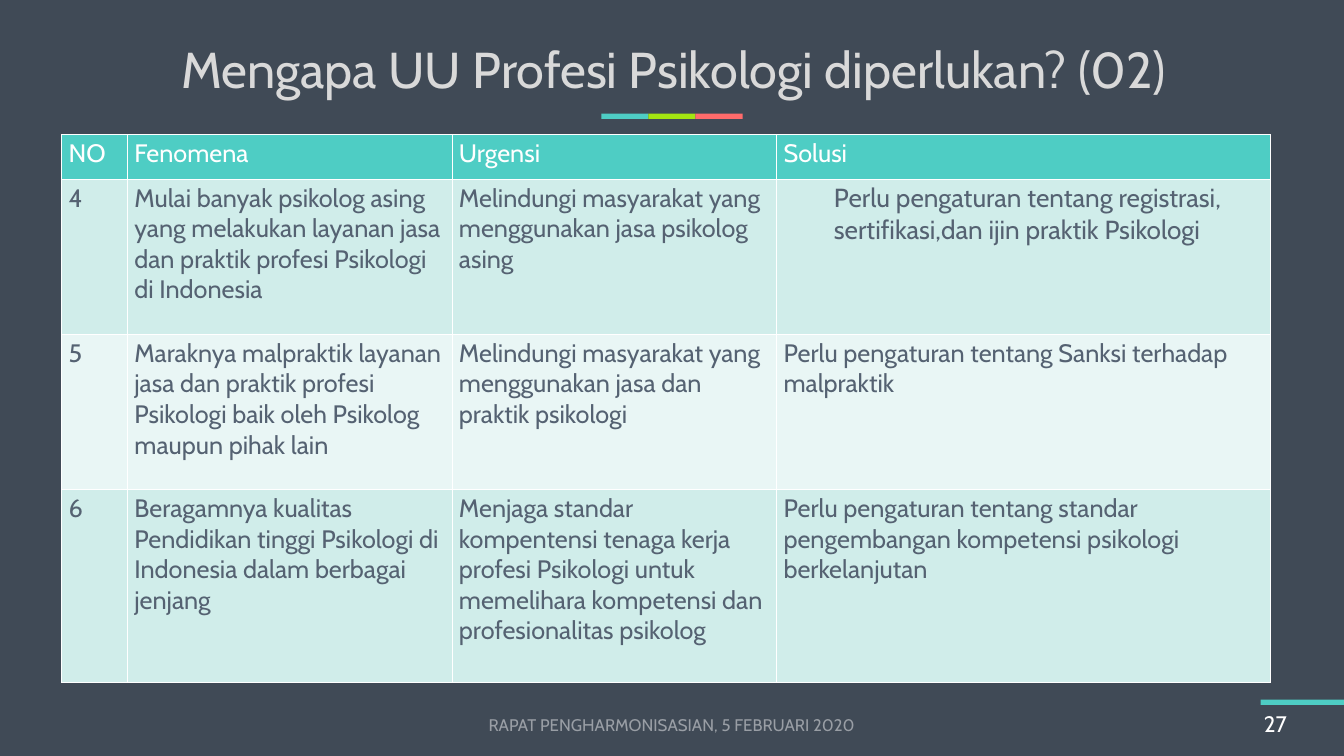
from lxml import etree
from pptx import Presentation
from pptx.dml.color import RGBColor
from pptx.enum.shapes import MSO_SHAPE
from pptx.enum.text import MSO_ANCHOR, MSO_AUTO_SIZE, PP_ALIGN
from pptx.oxml.ns import qn
from pptx.util import Inches, Pt

RECT = MSO_SHAPE.RECTANGLE
MIDDLE = MSO_ANCHOR.MIDDLE
NO_FIT = MSO_AUTO_SIZE.NONE
LEFT, CENTER = PP_ALIGN.LEFT, PP_ALIGN.CENTER

WIDE, HIGH = 20, 11.25  # grid of one-inch columns and rows
TITLE_ONLY = 5
TEAL, LIME, CORAL = "4ECDC4", "A3E511", "FF6B6B"
WHITE, SLATE = "FFFFFF", "556272"
BANDS = ["D0EDEA", "E9F6F5"]

HEADS = ["NO", "Fenomena", "Urgensi", "Solusi"]
ROWS = [
    ["4",
     "Mulai banyak psikolog asing yang melakukan layanan jasa dan praktik profesi Psikologi di Indonesia",
     "Melindungi masyarakat yang menggunakan jasa psikolog asing",
     "Perlu pengaturan tentang registrasi, sertifikasi,dan ijin praktik Psikologi"],
    ["5",
     "Maraknya malpraktik layanan jasa dan praktik profesi Psikologi baik oleh Psikolog maupun pihak lain",
     "Melindungi masyarakat yang menggunakan jasa dan praktik psikologi",
     "Perlu pengaturan tentang Sanksi terhadap malpraktik"],
    ["6",
     "Beragamnya kualitas Pendidikan tinggi Psikologi di Indonesia dalam berbagai jenjang",
     "Menjaga standar kompentensi tenaga kerja profesi Psikologi untuk memelihara kompetensi dan profesionalitas psikolog",
     "Perlu pengaturan tentang standar pengembangan kompetensi psikologi berkelanjutan"],
]


def paint(color, code):
    color.rgb = RGBColor.from_string(code)


def fill(item, code):
    item.fill.solid()
    paint(item.fill.fore_color, code)


def edge(cell, code, width):
    """Draw a line on all four sides of a table cell."""
    props = cell._tc.get_or_add_tcPr()
    for side in ("a:lnL", "a:lnR", "a:lnT", "a:lnB"):
        line = etree.SubElement(props, qn(side), w=str(Pt(width)))
        solid = etree.SubElement(line, qn("a:solidFill"))
        etree.SubElement(solid, qn("a:srgbClr"), val=code)


class Deck:
    """Holds the style and the current slide; lengths are grid units."""

    font = "Cabin"

    def __init__(self, back):
        self.file = Presentation()
        self.file.slide_width = Inches(WIDE)
        self.file.slide_height = Inches(HIGH)
        layout = self.file.slide_layouts[TITLE_ONLY]
        self.slide = self.file.slides.add_slide(layout)
        fill(self.slide.background, back)

    def put(self, frame, text, size, code, align=LEFT):
        """Set a frame's text in the deck's style and return its paragraph."""
        frame.text = text
        frame.word_wrap = True
        para = frame.paragraphs[0]
        para.alignment = align
        font = para.runs[0].font
        font.name, font.size = self.font, Pt(size)
        paint(font.color, code)
        return para

    def title(self, box, text, size, code):
        shape = self.slide.shapes.title
        shape.left, shape.top, shape.width, shape.height = map(Inches, box)
        frame = shape.text_frame
        para = self.put(frame, text, size, code, CENTER)
        para.line_spacing = 0.9
        frame.auto_size = NO_FIT
        frame.vertical_anchor = MIDDLE

    def label(self, box, text, size, code, align=LEFT):
        frame = self.slide.shapes.add_textbox(*map(Inches, box)).text_frame
        self.put(frame, text, size, code, align)
        frame.vertical_anchor = MIDDLE

    def bar(self, box, code):
        shape = self.slide.shapes.add_shape(RECT, *map(Inches, box))
        shape.shadow.inherit = False
        fill(shape, code)
        shape.line.fill.background()

    def table(self, left, top, cols, rows, data, size):
        """Build a table with a teal head and banded body rows."""
        box = map(Inches, (left, top, sum(cols), sum(rows)))
        grid = self.slide.shapes.add_table(len(rows), len(cols), *box).table
        for col, width in zip(grid.columns, cols):
            col.width = Inches(width)
        for r, (row, height) in enumerate(zip(grid.rows, rows)):
            row.height = Inches(height)
            back = BANDS[(r - 1) % 2] if r else TEAL
            for cell, text in zip(row.cells, data[r]):
                self.put(cell.text_frame, text, size, SLATE if r else WHITE)
                edge(cell, WHITE, 1)
                fill(cell, back)
        return grid


def main():
    deck = Deck("404A56")
    for i, code in enumerate((TEAL, LIME, CORAL)):
        deck.bar((8.95 + 0.7 * i, 1.69, 0.7, 0.08), code)
    deck.bar((18.76, 10.41, 1.24, 0.08), TEAL)
    deck.title((0.54, 0.38, 18.96, 1.4),
               "Mengapa UU Profesi Psikologi diperlukan? (02)", 54, "D9D9D9")
    deck.label((18.71, 10.5, 1.29, 0.53), "27", 24, WHITE)

    grid = deck.table(0.92, 2, [0.98, 4.83, 4.83, 7.35],
                      [0.67, 2.31, 2.31, 2.86], [HEADS] + ROWS, 27)
    para = grid.cell(1, 3).text_frame.paragraphs[0]
    para.level = 1
    para.runs[0].font.size = Pt(28)
    props = para._p.get_or_add_pPr()
    props.set("marL", str(Inches(0.75)))
    props.set("indent", "0")

    deck.label((6.62, 10.48, 6.75, 0.6),
               "RAPAT PENGHARMONISASIAN, 5 FEBRUARI 2020", 18, "999EA5", CENTER)
    deck.file.save("out.pptx")


if __name__ == "__main__":
    main()
